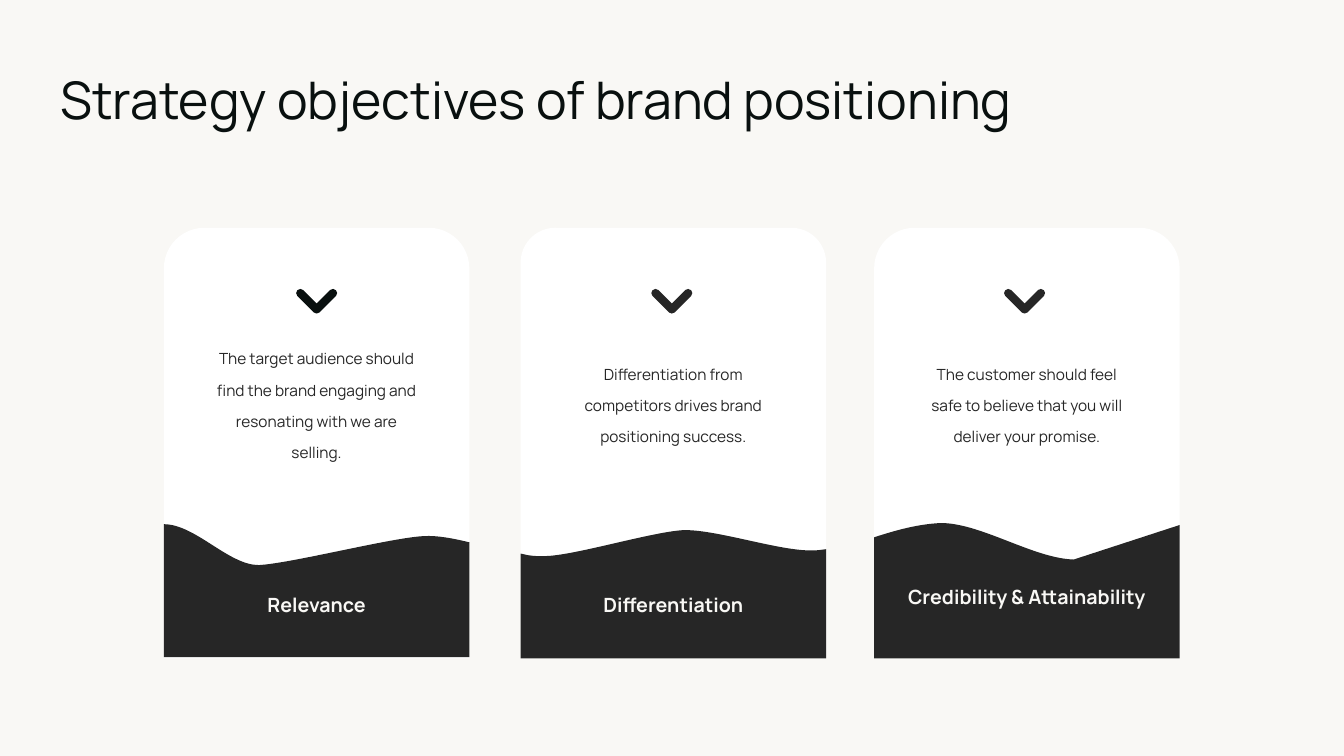
from lxml import etree
from pptx import Presentation
from pptx.dml.color import RGBColor
from pptx.enum import shapes, text
from pptx.oxml import ns
from pptx.util import Cm, Pt

INK, DARK, PALE, WHITE = "09100F", "262626", "F9F8F5", "FFFFFF"
WIDE, HIGH, TOP = 7.7, 10.85, 5.74
TICK = 0.79

ARROW = [
    (0.1, 0), (0.69, 0), (0.75, 0, TICK, 0.05, TICK, 0.1),
    (TICK, 0.16, 0.75, 0.21, 0.69, 0.21), (0.21, 0.21), (0.21, 0.69),
    (0.21, 0.75, 0.16, TICK, 0.1, TICK), (0.05, TICK, 0, 0.75, 0, 0.69),
    (0, 0.1), (0, 0.05, 0.05, 0, 0.1, 0),
]

CARDS = [
    dict(left=4.13, round=0.133, base=10.82, tint=INK, shift=0, lines=4, mid=9.5,
         name="Relevance",
         body="The target audience should find the brand engaging and "
              "resonating with we are selling.",
         wave=[(0, 7.47), (0.79, 7.47, 1.63, 8.5, 2.39, 8.5),
               (3.2, 8.46, 5.77, 7.8, 6.56, 7.77),
               (6.86, 7.75, 7.26, 7.82, 7.67, 7.92), (WIDE, 7.92)]),
    dict(left=13.12, round=0.114, base=HIGH, tint=DARK, shift=-0.04, lines=3, mid=9.5,
         name="Differentiation",
         body="Differentiation from competitors drives brand positioning success.",
         wave=[(0, 8.21), (0.18, 8.25), (0.36, 8.28, 0.53, 8.28, 0.69, 8.27),
               (1.45, 8.23, 3.3, 7.67, 4.09, 7.62),
               (4.9, 7.59, 6.53, 8.15, 7.34, 8.13),
               (7.42, 8.13, 7.49, 8.13, 7.54, 8.12), (WIDE, 8.1)]),
    dict(left=22.03, round=0.133, base=HIGH, tint=DARK, shift=-0.06, lines=3, mid=9.3,
         name="Credibility & Attainability",
         body="The customer should feel safe to believe that you will "
              "deliver your promise.",
         wave=[(0, 7.8), (0.03, 7.79), (0.56, 7.62, 1.09, 7.47, 1.68, 7.44),
               (2.69, 7.44, 4.01, 8.33, 5.03, 8.36), (WIDE, 7.49)]),
]


def color(code):
    return RGBColor.from_string(code)


def paint(shape, code):
    shape.fill.solid()
    shape.fill.fore_color.rgb = color(code)
    shape.line.fill.background()
    shape.shadow.inherit = False


def curve(form, parts):
    root = form.element.xpath(".//a:path")[0]
    lines = iter(root.findall(ns.qn("a:lnTo")))
    for part in parts[1:]:
        group = [next(lines) for k in range(len(part) // 2)]
        if len(group) == 1:
            continue
        bend = etree.Element(ns.qn("a:cubicBezTo"))
        group[0].addprevious(bend)
        for line in group:
            bend.append(line[0])
            root.remove(line)


def outline(slide, parts, left, top, code):
    dots = [(Cm(left + part[k]), Cm(top + part[k + 1]))
            for part in parts for k in range(0, len(part), 2)]
    maker = slide.shapes.build_freeform(*dots[0])
    maker.add_line_segments(dots[1:], close=True)
    form = maker.convert_to_shape()
    curve(form, parts)
    paint(form, code)
    return form


def style(frame, words, size, code, align, bold=False):
    frame.margin_left = frame.margin_right = 0
    frame.margin_top = frame.margin_bottom = 0
    frame.word_wrap = True
    frame.text = words
    para = frame.paragraphs[0]
    para.alignment = align
    font = para.runs[0].font
    font.name, font.size, font.bold = "Manrope", Pt(size), bold
    font.color.rgb = color(code)
    return para


def label(slide, words, left, mid, wide, high, size, code, bold=False):
    box = slide.shapes.add_textbox(Cm(left), Cm(mid - high / 2), Cm(wide), Cm(high))
    frame = box.text_frame
    para = style(frame, words, size, code, text.PP_ALIGN.CENTER, bold)
    frame.vertical_anchor = text.MSO_ANCHOR.MIDDLE
    frame.auto_size = text.MSO_AUTO_SIZE.SHAPE_TO_FIT_TEXT
    return para


def head(slide, left, top, wide, high):
    title = slide.shapes.title
    title.left, title.top, title.width, title.height = map(Cm, (left, top, wide, high))
    frame = title.text_frame
    style(frame, "Strategy objectives of brand positioning", 37, INK, text.PP_ALIGN.LEFT)
    frame.vertical_anchor = text.MSO_ANCHOR.TOP
    frame.auto_size = text.MSO_AUTO_SIZE.NONE


def card(slide, data, left, top, wide, high):
    panel = slide.shapes.add_shape(
        shapes.MSO_SHAPE.ROUND_2_SAME_RECTANGLE, Cm(left), Cm(top), Cm(wide), Cm(high))
    panel.adjustments[0] = data["round"]
    panel.adjustments[1] = 0
    paint(panel, WHITE)
    base = data["base"]
    outline(slide, data["wave"] + [(wide, base), (0, base)], left, top, DARK)
    label(slide, data["name"], left + 0.5, top + data["mid"], wide - 1, 0.61,
          14, PALE, True)
    para = label(slide, data["body"], left + 1.27, top + 4.32, wide - 2.54,
                 0.67 * data["lines"], 11, DARK)
    para.line_spacing = 1.69
    tick = outline(slide, ARROW, left + (wide - TICK) / 2 + data["shift"],
                   top + 1.25, data["tint"])
    tick.rotation = 225


def main():
    deck = Presentation()
    deck.slide_width, deck.slide_height = Cm(33.87), Cm(19.05)
    slide = deck.slides.add_slide(deck.slide_layouts[5])
    slide.background.fill.solid()
    slide.background.fill.fore_color.rgb = color(PALE)
    head(slide, 1.52, 1.7, 28.47, 1.73)
    for data in CARDS:
        card(slide, data, data["left"], TOP, WIDE, HIGH)
    deck.save("out.pptx")


if __name__ == "__main__":
    main()
